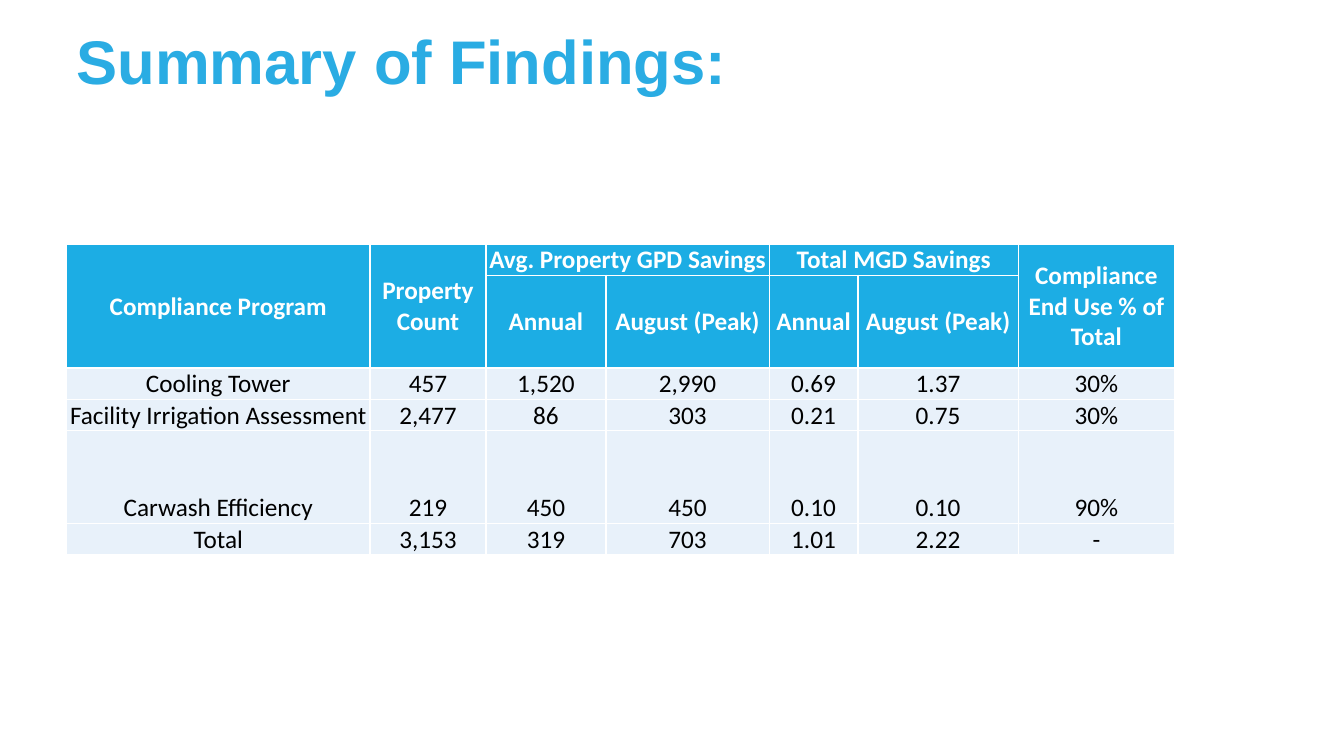
from dataclasses import dataclass

from lxml.etree import SubElement
from pptx import Presentation
from pptx.dml.color import RGBColor
from pptx.enum.text import MSO_ANCHOR, PP_ALIGN
from pptx.oxml.ns import qn
from pptx.util import Inches, Pt


@dataclass(frozen=True)
class Theme:
    title: str = "2AACE3"
    header: str = "1CADE4"
    body: str = "E8F1FA"
    white: str = "FFFFFF"
    black: str = "000000"
    title_font: str = "Arial"
    table_font: str = "Calibri"
    title_size: int = 44
    table_size: int = 18
    border: int = 1


THEME = Theme()
HEADER_ROWS = 2
COLUMN_WIDTHS = [3.01, 1.15, 1.19, 1.62, 0.88, 1.59, 1.55]
ROW_HEIGHTS = [0.31, 0.92, 0.31, 0.31, 0.92, 0.31]
FINDINGS = [
    ["Compliance Program", "Property Count", "Avg. Property GPD Savings", "",
     "Total MGD Savings", "", "Compliance End Use % of Total"],
    ["", "", "Annual", "August (Peak)", "Annual", "August (Peak)", ""],
    ["Cooling Tower", "457", "1,520", "2,990", "0.69", "1.37", "30%"],
    ["Facility Irrigation Assessment", "2,477", "86", "303", "0.21", "0.75", "30%"],
    ["Carwash Efficiency", "219", "450", "450", "0.10", "0.10", "90%"],
    ["Total", "3,153", "319", "703", "1.01", "2.22", "-"],
]
MERGES = [((0, 0), (1, 0)), ((0, 1), (1, 1)), ((0, 2), (0, 3)),
          ((0, 4), (0, 5)), ((0, 6), (1, 6))]


def style_font(font, name, size, color, bold):
    font.name = name
    font.size = Pt(size)
    font.bold = bold
    font.color.rgb = RGBColor.from_string(color)


def add_borders(cell, color, width):
    """Draw all four edges; must run before the cell fill is set."""
    tc_pr = cell._tc.get_or_add_tcPr()
    for edge in ("lnL", "lnR", "lnT", "lnB"):
        line = SubElement(tc_pr, qn(f"a:{edge}"), w=str(Pt(width)))
        fill = SubElement(line, qn("a:solidFill"))
        SubElement(fill, qn("a:srgbClr"), val=color)


prs = Presentation()
prs.slide_width, prs.slide_height = Inches(13.33), Inches(7.5)
s = prs.slides.add_slide(prs.slide_layouts[6])

title = s.shapes.add_textbox(Inches(0.66), Inches(0.26), Inches(12.5), Inches(1.08))
tf = title.text_frame
tf.word_wrap = True
tf.vertical_anchor = MSO_ANCHOR.TOP
tf.text = "Summary of Findings:"
p = tf.paragraphs[0]
p.line_spacing = 0.9
style_font(p.runs[0].font, THEME.title_font, THEME.title_size, THEME.title, True)

table = s.shapes.add_table(
    len(ROW_HEIGHTS), len(COLUMN_WIDTHS), Inches(0.66), Inches(2.42),
    Inches(sum(COLUMN_WIDTHS)), Inches(sum(ROW_HEIGHTS))).table
for column, width in zip(table.columns, COLUMN_WIDTHS):
    column.width = Inches(width)
for row, height in zip(table.rows, ROW_HEIGHTS):
    row.height = Inches(height)

for i, values in enumerate(FINDINGS):
    is_header = i < HEADER_ROWS
    for j, value in enumerate(values):
        cell = table.cell(i, j)
        add_borders(cell, THEME.white, THEME.border)
        cell.fill.solid()
        cell.fill.fore_color.rgb = RGBColor.from_string(
            THEME.header if is_header else THEME.body)
        cell.margin_left = cell.margin_right = cell.margin_top = Inches(0.01)
        cell.margin_bottom = 0
        cell.vertical_anchor = MSO_ANCHOR.MIDDLE if is_header else MSO_ANCHOR.BOTTOM
        cell.text = value
        p = cell.text_frame.paragraphs[0]
        p.alignment = PP_ALIGN.CENTER
        for r in p.runs:
            style_font(r.font, THEME.table_font, THEME.table_size,
                       THEME.white if is_header else THEME.black, is_header)

for first, last in MERGES:
    table.cell(*first).merge(table.cell(*last))

prs.save("out.pptx")
